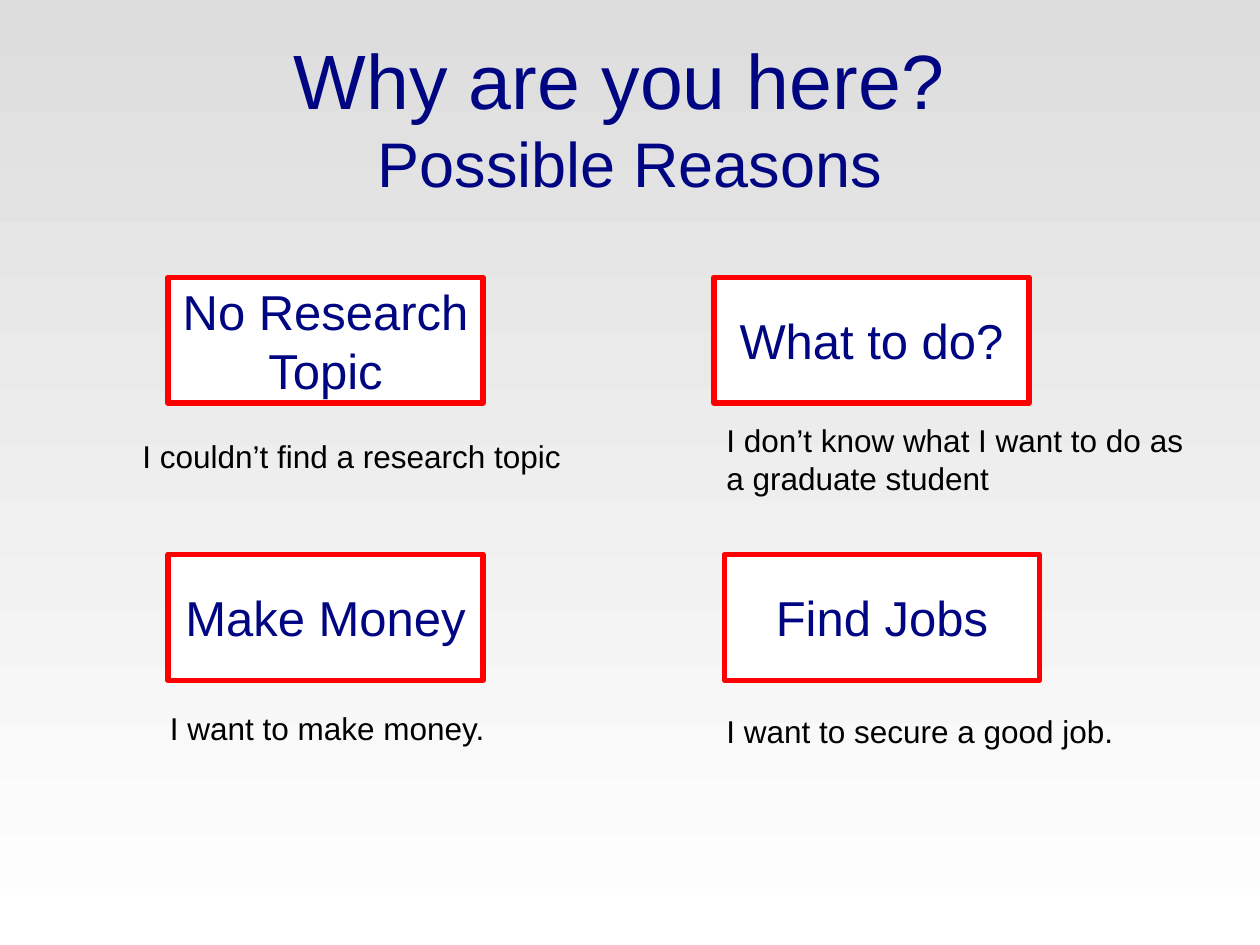
from pptx import Presentation
from pptx import util as u
from pptx.dml.color import RGBColor
from pptx.enum import shapes, text

NAVY, RED, WHITE, BLACK = "000681", "FF0000", "FFFFFF", "000000"
CENTER, LEFT = text.PP_ALIGN.CENTER, text.PP_ALIGN.LEFT

deck = Presentation()
deck.slide_width, deck.slide_height = u.Inches(10), u.Inches(7.5)
column, row = deck.slide_width / 120, deck.slide_height / 75


def cell(left, top, width, height):
    return int(left * column), int(top * row), int(width * column), int(height * row)


def style(font, size, color):
    font.name, font.size = "Arial", u.Pt(size)
    font.color.rgb = RGBColor.from_string(color)


slide = deck.slides.add_slide(deck.slide_layouts[5])
backdrop = slide.background.fill
backdrop.gradient()
backdrop.gradient_angle = 270
for stop, shade in zip(backdrop.gradient_stops, ("DDDDDD", WHITE)):
    stop.color.rgb = RGBColor.from_string(shade)
for stop, position in zip(backdrop.gradient_stops, (0, 1)):
    stop.position = position

title = slide.shapes.title
title.left, title.top, title.width, title.height = cell(6, 3, 108, 12.5)
title.text_frame.vertical_anchor = text.MSO_ANCHOR.MIDDLE
heading = title.text_frame.paragraphs[0]
heading.alignment = CENTER
question = heading.add_run()
question.text = "Why are you here? "
style(question.font, 44, NAVY)
heading.add_line_break()
subtitle = heading.add_run()
subtitle.text = "Possible Reasons"
style(subtitle.font, 36, NAVY)

reasons = [
    (68, 22, "What to do?"),
    (16, 22, "No Research Topic"),
    (16, 44, "Make Money"),
    (69, 44, "Find Jobs"),
]
for left, top, label in reasons:
    reason = slide.shapes.add_shape(shapes.MSO_SHAPE.RECTANGLE, *cell(left, top, 30, 10))
    reason.shadow.inherit = False
    reason.fill.solid()
    reason.fill.fore_color.rgb = RGBColor.from_string(WHITE)
    reason.line.color.rgb = RGBColor.from_string(RED)
    reason.line.width = u.Pt(3)
    reason.text_frame.word_wrap = True
    reason.text_frame.vertical_anchor = text.MSO_ANCHOR.MIDDLE
    line = reason.text_frame.paragraphs[0]
    line.alignment = CENTER
    run = line.add_run()
    run.text = label
    style(run.font, 28, NAVY)

explanations = [
    (62, 32.9, 53, 7.1, LEFT, "I don’t know what I want to do as a graduate student"),
    (9, 55.8, 46, 4, LEFT, "I want to make money."),
    (7, 34.2, 53, 4, CENTER, "I couldn’t find a research topic"),
    (62, 56, 50, 4, LEFT, "I want to secure a good job."),
]
for left, top, width, height, alignment, sentence in explanations:
    explanation = slide.shapes.add_textbox(*cell(left, top, width, height))
    explanation.text_frame.word_wrap = True
    line = explanation.text_frame.paragraphs[0]
    line.alignment = alignment
    if alignment == LEFT:
        line.level = 1
        indent = line._p.get_or_add_pPr()
        indent.set("marL", str(u.Inches(0.5)))
        indent.set("indent", "0")
    run = line.add_run()
    run.text = sentence
    style(run.font, 18, BLACK)

deck.save("out.pptx")
